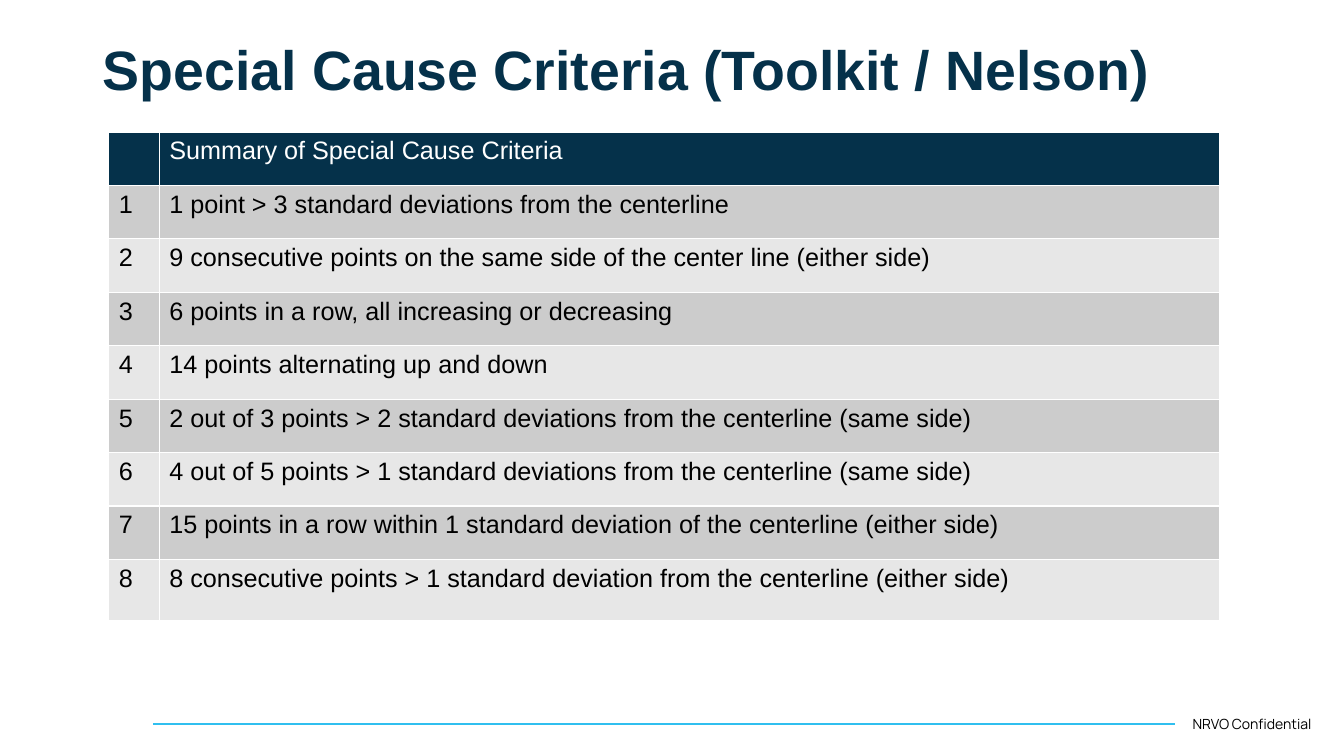
from dataclasses import dataclass

from pptx import Presentation
from pptx import util as u
from pptx.dml.color import RGBColor as Rgb
from pptx.enum import shapes, text
from pptx.oxml import parse_xml
from pptx.oxml.ns import nsdecls


@dataclass(frozen=True)
class Theme:
    navy: Rgb = Rgb(0x05, 0x31, 0x4A)
    sky: Rgb = Rgb(0x30, 0xBF, 0xEF)
    white: Rgb = Rgb(0xFF, 0xFF, 0xFF)
    black: Rgb = Rgb(0, 0, 0)
    bands: tuple = (Rgb(0xE7, 0xE7, 0xE7), Rgb(0xCC, 0xCC, 0xCC))
    main: str = "Arial"
    small: str = "Manrope"
    head: float = 39.6
    body: float = 18
    note: float = 10


theme = Theme()


def style(para, size, color, name=theme.main, bold=False):
    font = para.font
    font.name, font.size, font.bold = name, u.Pt(size), bold
    font.color.rgb = color


deck = Presentation()
deck.slide_width, deck.slide_height = u.Inches(13.33), u.Inches(7.5)
slide = deck.slides.add_slide(deck.slide_layouts[5])

# Footer rule and label
rule = slide.shapes.add_connector(
    shapes.MSO_CONNECTOR.STRAIGHT,
    u.Inches(1.52), u.Inches(7.18), u.Inches(11.65), u.Inches(7.18))
rule.line.color.rgb = theme.sky
rule.line.width = u.Pt(1.5)
rule._element.spPr.append(parse_xml(f"<a:effectLst {nsdecls('a')}/>"))

label = slide.shapes.add_textbox(
    u.Inches(11.73), u.Inches(7.05), u.Inches(1.48), u.Inches(0.27))
label.text_frame.text = "NRVO Confidential"
style(label.text_frame.paragraphs[0], theme.note, theme.black, theme.small)

# Title
title = slide.shapes.title
title.left, title.top = u.Inches(0.92), u.Inches(0.28)
title.width, title.height = u.Inches(11.5), u.Inches(0.88)
frame = title.text_frame
frame.text = "Special Cause Criteria (Toolkit / Nelson)"
frame.auto_size = text.MSO_AUTO_SIZE.NONE
frame.vertical_anchor = text.MSO_ANCHOR.MIDDLE
para = frame.paragraphs[0]
para.alignment = text.PP_ALIGN.LEFT
para.line_spacing = 0.9
style(para, theme.head, theme.navy, bold=True)

# Criteria table: the row number is the rule number
rules = [
    "Summary of Special Cause Criteria",
    "1 point > 3 standard deviations from the centerline",
    "9 consecutive points on the same side of the center line (either side)",
    "6 points in a row, all increasing or decreasing",
    "14 points alternating up and down",
    "2 out of 3 points > 2 standard deviations from the centerline (same side)",
    "4 out of 5 points > 1 standard deviations from the centerline (same side)",
    "15 points in a row within 1 standard deviation of the centerline (either side)",
    "8 consecutive points > 1 standard deviation from the centerline (either side)",
]
grid = slide.shapes.add_table(
    len(rules), 2, u.Inches(1.08), u.Inches(1.31),
    u.Inches(11.02), u.Inches(4.85)).table
grid.columns[0].width, grid.columns[1].width = u.Inches(0.5), u.Inches(10.52)

for row, words in enumerate(rules):
    last = row == len(rules) - 1
    grid.rows[row].height = u.Inches(0.61 if last else 0.53)
    fill = theme.bands[row % 2] if row else theme.navy
    ink = theme.black if row else theme.white
    for col, value in enumerate((str(row) if row else "", words)):
        cell = grid.cell(row, col)
        cell.text = value
        cell.fill.solid()
        cell.fill.fore_color.rgb = fill
        style(cell.text_frame.paragraphs[0], theme.body, ink)

deck.save("out.pptx")
